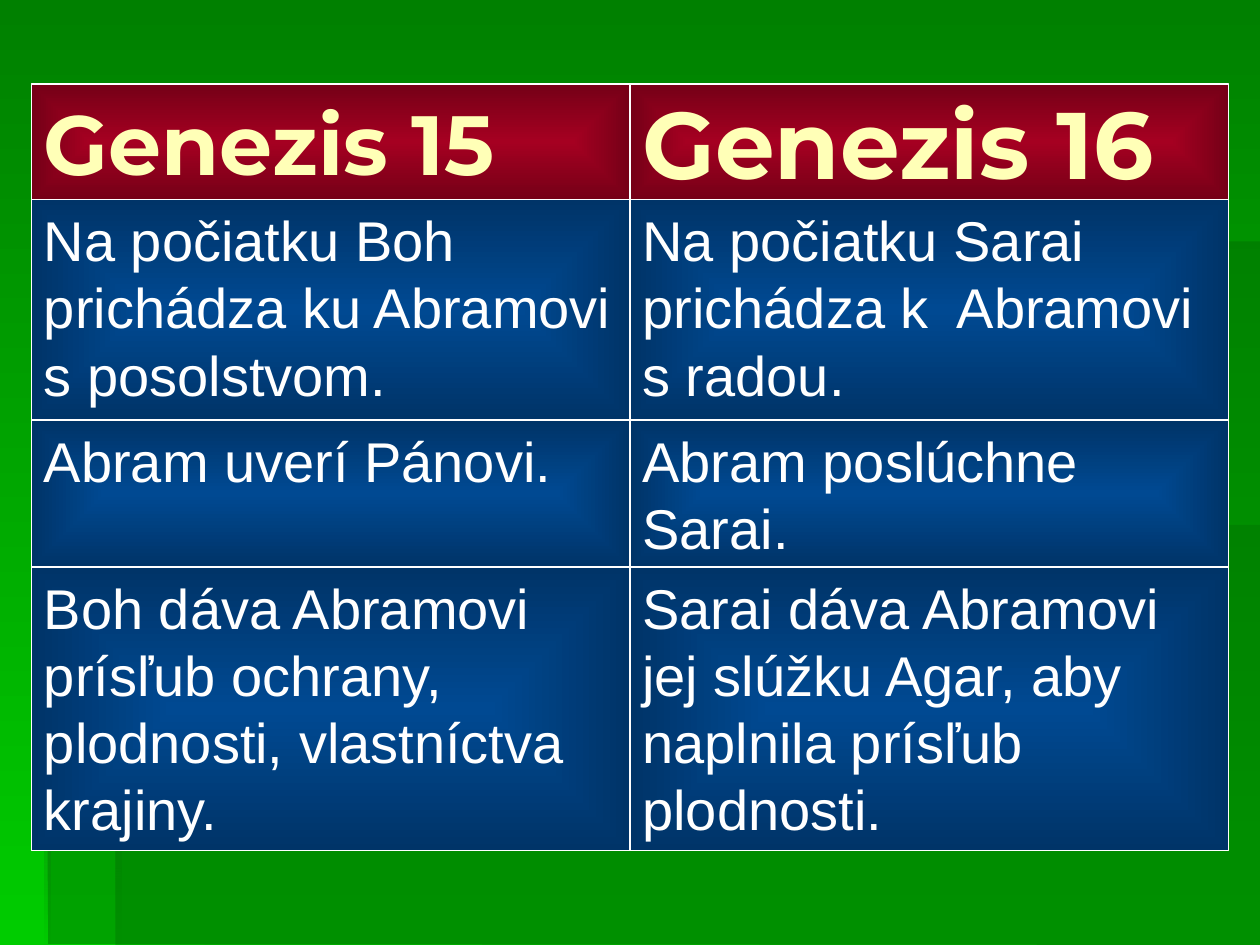
import lxml.etree
import pptx
import pptx.enum.shapes
import pptx.enum.text
import pptx.oxml
import pptx.oxml.ns
import pptx.util

PX = 914400 // 120  # EMU per px, slide is 1200 x 900 px
qn = pptx.oxml.ns.qn

LINEAR = '<a:lin ang="{}" scaled="1"/>'
CENTRED = ('<a:path path="shape"><a:fillToRect l="50000" t="50000" '
           'r="50000" b="50000"/></a:path>')


def rgb(hex_color):
    return pptx.dml.color.RGBColor.from_string(hex_color)


def set_gradient(fill, element, stops, direction):
    """Fill with stops of (position %, colour, modifier, modifier %)."""
    fill.gradient()
    old = next(element.iter(qn("a:gradFill")))
    gs = "".join(
        f'<a:gs pos="{pos * 1000}"><a:srgbClr val="{color}">'
        f'<a:{mod} val="{value * 1000}"/></a:srgbClr></a:gs>'
        for pos, color, mod, value in stops)
    new = pptx.oxml.parse_xml(
        f'<a:gradFill {pptx.oxml.ns.nsdecls("a")} rotWithShape="1">'
        f'<a:gsLst>{gs}</a:gsLst>{direction}</a:gradFill>')
    old.getparent().replace(old, new)


class Slide:
    HEAD = {"name": "Montserrat", "bold": True}
    BODY = {"name": "Arial", "bold": False, "size": pptx.util.Pt(32)}
    HEAD_TEXT, BODY_TEXT, BORDER = "FFFFB7", "FFFFFF", "FFFFFF"
    HEAD_FILL, BODY_FILL = "A50021", "004992"

    def __init__(self, prs):
        self.s = prs.slides.add_slide(prs.slide_layouts[6])

    def background(self, top, bottom):
        stops = [(0, top, "alpha", 100), (100, bottom, "alpha", 100)]
        set_gradient(self.s.background.fill, self.s.element, stops,
                     LINEAR.format(5400000))

    def outline(self, points):
        builder = self.s.shapes.build_freeform(*points[0], scale=PX)
        builder.add_line_segments(points[1:], close=True)
        sp = builder.convert_to_shape()
        sp.shadow.inherit = False
        sp.line.fill.background()
        return sp

    def panel(self, points, color, opacity):
        sp = self.outline(points)
        sp.fill.solid()
        sp.fill.fore_color.rgb = rgb(color)
        clr = next(sp.element.iter(qn("a:srgbClr")))
        lxml.etree.SubElement(clr, qn("a:alpha"), val=str(opacity * 1000))

    def edge(self, points, stops, angle):
        sp = self.outline(points)
        set_gradient(sp.fill, sp.element, stops, LINEAR.format(angle * 60000))

    def cell(self, x, y, w, h, text, head_size=None):
        sp = self.s.shapes.add_shape(
            pptx.enum.shapes.MSO_SHAPE.RECTANGLE, *(v * PX for v in (x, y, w, h)))
        sp.shadow.inherit = False
        color = self.HEAD_FILL if head_size else self.BODY_FILL
        stops = [(0, color, "alpha", 100), (100, color, "shade", 46)]
        set_gradient(sp.fill, sp.element, stops, CENTRED)
        sp.line.color.rgb = rgb(self.BORDER)
        sp.line.width = pptx.util.Pt(0.75)

        tf = sp.text_frame
        tf.word_wrap = True
        anchor = pptx.enum.text.MSO_ANCHOR
        tf.vertical_anchor = anchor.MIDDLE if head_size else anchor.TOP
        p = tf.paragraphs[0]
        p.alignment = pptx.enum.text.PP_ALIGN.LEFT
        r = p.add_run()
        r.text = text
        if head_size:
            style = self.HEAD | {"size": pptx.util.Pt(head_size)}
        else:
            style = self.BODY
            # Space before as a share of the text size
            before = lxml.etree.SubElement(p._p.get_or_add_pPr(), qn("a:spcBef"))
            lxml.etree.SubElement(before, qn("a:spcPct"), val="20000")
        for key, value in style.items():
            setattr(r.font, key, value)
        r.font.color.rgb = rgb(self.HEAD_TEXT if head_size else self.BODY_TEXT)


def main():
    prs = pptx.Presentation()
    prs.slide_width, prs.slide_height = 1200 * PX, 900 * PX
    slide = Slide(prs)

    # Green background with two stepped panels
    slide.background("008000", "00CC00")
    slide.panel([(114, 230), (113, 499), (43, 499), (46, 899),
                 (1200, 900), (1200, 230)], "006600", 40)
    slide.panel([(110, 500), (110, 900), (1200, 900), (1200, 500)], "006600", 30)

    # Soft edges of the panels
    across = [(0, "006600", "alpha", 0), (100, "005E00", "alpha", 100)]
    down = [(0, "668666", "alpha", 100), (100, "006600", "alpha", 0)]
    corners = [(42, 496, 720, 408), (110, 230, 1020, 672)]
    for x, y, w, h in corners:
        slide.edge([(x, y), (x, y + 6), (x + w, y + 6), (x + w, y)], across, 0)
    for x, y, w, h in corners:
        slide.edge([(x, y), (x, y + h), (x + 6, y + h), (x + 6, y + 7)], down, 90)

    # Comparison grid: height, texts, heading sizes
    rows = [
        (110, ("Genezis 15", "Genezis 16"), (48, 54)),
        (210, ("Na počiatku Boh prichádza ku Abramovi s posolstvom.",
               "Na počiatku Sarai prichádza k  Abramovi s radou."), (None, None)),
        (140, ("Abram uverí Pánovi.", "Abram poslúchne Sarai."), (None, None)),
        (270, ("Boh dáva Abramovi prísľub ochrany, plodnosti, vlastníctva krajiny.",
               "Sarai dáva Abramovi jej slúžku Agar, aby naplnila prísľub plodnosti."),
         (None, None)),
    ]
    left, top, width = 30, 80, 570
    for height, texts, sizes in rows:
        for col, (text, size) in enumerate(zip(texts, sizes)):
            slide.cell(left + col * width, top, width, height, text, size)
        top += height

    prs.save("out.pptx")


if __name__ == "__main__":
    main()
